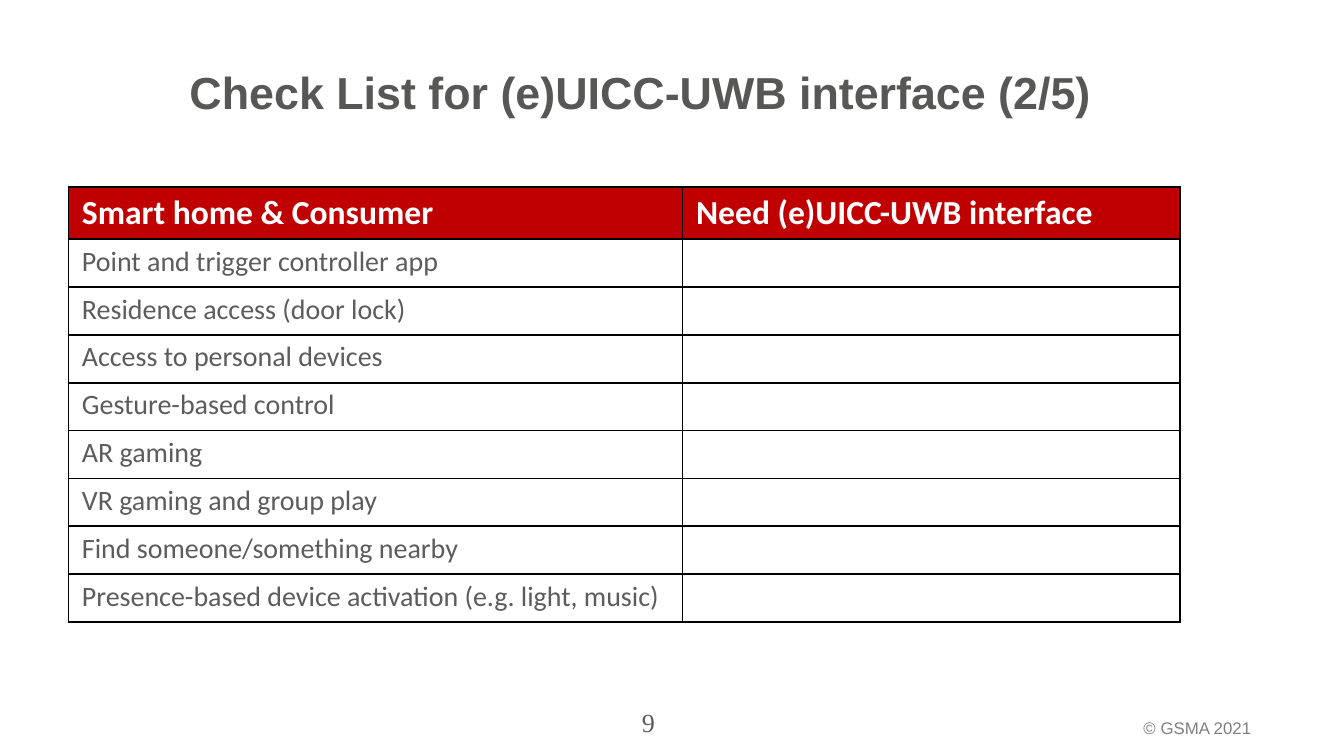
from lxml import etree
from pptx import Presentation
from pptx.dml.color import RGBColor
from pptx.enum.text import MSO_ANCHOR, MSO_AUTO_SIZE, PP_ALIGN
from pptx.oxml.ns import qn
from pptx.util import Inches, Pt

COLORS = {
    "title": "575756",
    "body": "5C5C5C",
    "footer": "808080",
    "header_fill": "C00000",
    "header_text": "FFFFFF",
    "border": "000000",
}
HEADINGS = ["Smart home & Consumer", "Need (e)UICC-UWB interface"]
USE_CASES = [
    "Point and trigger controller app",
    "Residence access (door lock)",
    "Access to personal devices",
    "Gesture-based control",
    "AR gaming",
    "VR gaming and group play",
    "Find someone/something nearby",
    "Presence-based device activation (e.g. light, music)",
]
BODY_SIZE = 15


def write(frame, text, font="Arial", size=BODY_SIZE, color="body", bold=False,
          align=PP_ALIGN.LEFT):
    frame.word_wrap = True
    para = frame.paragraphs[0]
    para.alignment = align
    span = para.add_run()
    span.text = text
    span.font.name = font
    span.font.size = Pt(size)
    span.font.bold = bold
    span.font.color.rgb = RGBColor.from_string(COLORS[color])


def place_title(page, left, top, width, height, text):
    title = page.shapes.title
    title.left, title.top = Inches(left), Inches(top)
    title.width, title.height = Inches(width), Inches(height)
    frame = title.text_frame
    frame.auto_size = MSO_AUTO_SIZE.NONE
    frame.vertical_anchor = MSO_ANCHOR.TOP
    write(frame, text, size=24, color="title", bold=True)


def add_label(page, left, top, width, height, text, **style):
    box = page.shapes.add_textbox(Inches(left), Inches(top),
                                  Inches(width), Inches(height))
    write(box.text_frame, text, **style)


def add_borders(cell):
    """Draw a 1 pt line on all four sides, ahead of the cell's fill."""
    props = cell._tc.get_or_add_tcPr()
    for index, side in enumerate(("a:lnL", "a:lnR", "a:lnT", "a:lnB")):
        line = etree.Element(qn(side), w=str(Pt(1)))
        fill = etree.SubElement(line, qn("a:solidFill"))
        etree.SubElement(fill, qn("a:srgbClr"), val=COLORS["border"])
        props.insert(index, line)


def keep_empty(cell):
    """Give an empty cell the body text size, so its row does not grow."""
    para = cell.text_frame.paragraphs[0]
    etree.SubElement(para._p, qn("a:endParaRPr"), sz=str(BODY_SIZE * 100))


def add_checklist(page, left, top, width, height):
    rows = [HEADINGS] + [[use_case, ""] for use_case in USE_CASES]
    table = page.shapes.add_table(len(rows), 2, Inches(left), Inches(top),
                                  Inches(width), Inches(height)).table
    name_width, header_height = 4.57, 0.39
    table.columns[0].width = Inches(name_width)
    table.columns[1].width = Inches(width - name_width)
    row_height = (height - header_height) / len(USE_CASES)
    for r, texts in enumerate(rows):
        is_header = r == 0
        table.rows[r].height = Inches(header_height if is_header else row_height)
        for c, text in enumerate(texts):
            cell = table.cell(r, c)
            cell.margin_left = cell.margin_right = Inches(0.1)
            cell.margin_top = cell.margin_bottom = Inches(0.04)
            if is_header:
                cell.fill.solid()
                cell.fill.fore_color.rgb = RGBColor.from_string(COLORS["header_fill"])
                write(cell.text_frame, text, font="Calibri", size=18,
                      color="header_text", bold=True)
            else:
                cell.fill.background()
                if text:
                    write(cell.text_frame, text, font="Calibri")
                else:
                    keep_empty(cell)
            add_borders(cell)


def main():
    deck = Presentation()
    deck.slide_width = Inches(10)
    deck.slide_height = deck.slide_width * 9 // 16
    page = deck.slides.add_slide(deck.slide_layouts[5])
    add_label(page, 8.41, 5.29, 1.57, 0.25, "© GSMA 2021", size=9, color="footer")
    place_title(page, 1.31, 0.43, 8.09, 0.94,
                "Check List for (e)UICC-UWB interface (2/5)")
    add_checklist(page, 0.51, 1.39, 8.27, 3.24)
    add_label(page, 3.66, 5.21, 2.33, 0.3, "9", font="Times New Roman",
              size=14, align=PP_ALIGN.CENTER)
    deck.save("out.pptx")


if __name__ == "__main__":
    main()
